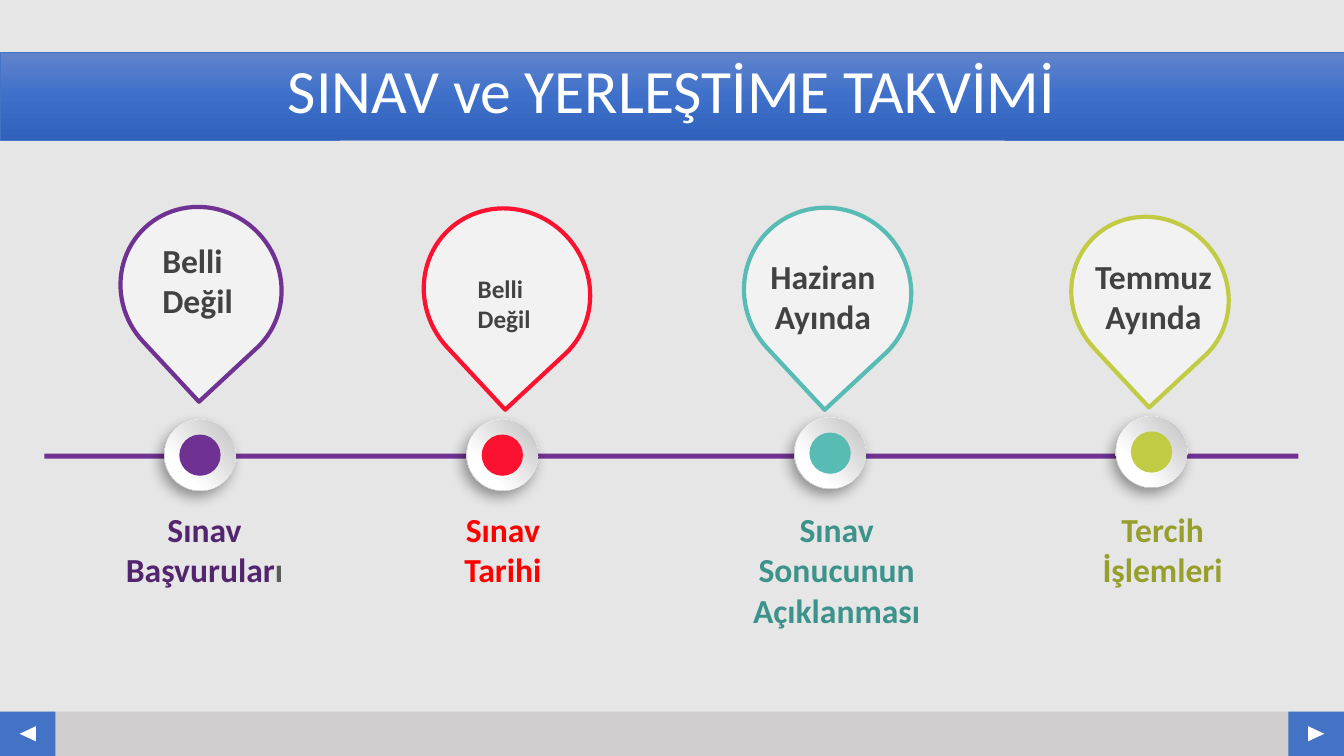
from copy import deepcopy
from dataclasses import dataclass
from typing import NamedTuple

from lxml.etree import SubElement
from pptx import Presentation
from pptx.dml.color import RGBColor
from pptx.enum.shapes import MSO_SHAPE
from pptx.enum.text import MSO_ANCHOR, MSO_AUTO_SIZE, PP_ALIGN
from pptx.oxml.ns import qn
from pptx.shapes.autoshape import Shape
from pptx.slide import Slide
from pptx.util import Cm, Pt


class Box(NamedTuple):
    left: float
    top: float
    width: float
    height: float


class Stop(NamedTuple):
    position: float
    color: str


@dataclass(frozen=True)
class Theme:
    font: str = "Calibri"
    background: str = "E7E6E6"
    footer: str = "D0CECE"
    accent: str = "4472C4"
    white: str = "FFFFFF"
    pin_fill: str = "F2F2F2"
    date_text: str = "424242"
    label_tail: str = "595959"
    timeline: str = "6F3293"
    banner: tuple[Stop, ...] = (Stop(0, "6183CB"), Stop(0.5, "3E70CA"), Stop(1, "3062BB"))
    knob_rim: tuple[Stop, ...] = (Stop(0.17, "FFFFFF"), Stop(0.88, "B8B8B8"))
    knob_face: tuple[Stop, ...] = (Stop(0.29, "FFFFFF"), Stop(0.98, "BFBFBF"))
    title_size: int = 44
    text_size: int = 24
    small_size: int = 18


@dataclass(frozen=True)
class Step:
    color: str
    pin: Box
    date: str
    date_box: Box
    knob_x: float
    knob_y: float
    label: str
    label_box: Box
    label_color: str
    label_tail: str = ""
    date_size: int = 24
    date_align: PP_ALIGN = PP_ALIGN.CENTER
    date_wraps: bool = False


THEME = Theme()
WIDTH, HEIGHT = 33.87, 19.05
FOOTER_HEIGHT, BUTTON_WIDTH = 1.12, 1.4
ARROW_WIDTH, ARROW_HEIGHT = 0.38, 0.41
PIN_ANGLE = 137.1

STEPS = (
    Step("6F3293", Box(3.07, 5.18, 3.99, 4.14), "Belli\nDeğil", Box(3.84, 5.92, 2.31, 2.31),
         5.04, 11.47, "Sınav Başvurular", Box(2.74, 12.7, 4.83, 2.31), "53256E",
         label_tail="ı", date_align=PP_ALIGN.LEFT),
    Step("FA1230", Box(10.72, 5.21, 4.11, 4.29), "Belli\nDeğil", Box(11.79, 6.76, 2.39, 1.8),
         12.66, 11.47, "Sınav Tarihi", Box(10.54, 12.7, 4.27, 2.31), "FF0000",
         date_size=THEME.small_size, date_align=PP_ALIGN.LEFT, date_wraps=True),
    Step("58BBB4", Box(18.77, 5.21, 4.17, 4.27), "Haziran\nAyında", Box(18.95, 6.32, 3.58, 2.31),
         20.92, 11.42, "Sınav Sonucunun Açıklanması", Box(18.34, 12.7, 5.49, 3.33), "3C938C"),
    Step("C2CB44", Box(27.05, 5.41, 3.86, 4.09), "Temmuz\nAyında", Box(27.33, 6.32, 3.48, 2.31),
         29.02, 11.39, "Tercih İşlemleri", Box(27.33, 12.7, 3.94, 2.31), "979F2C"),
)


def rgb(color: str) -> RGBColor:
    return RGBColor.from_string(color)


def add_block(slide: Slide, kind: MSO_SHAPE, box: Box, color: str, rotation: float = 0) -> Shape:
    block = slide.shapes.add_shape(kind, *map(Cm, box))
    block.shadow.inherit = False
    block.fill.solid()
    block.fill.fore_color.rgb = rgb(color)
    block.line.fill.background()
    block.rotation = rotation
    return block


def set_outline(block: Shape, color: str, points: float) -> None:
    block.line.color.rgb = rgb(color)
    block.line.width = Pt(points)


def set_gradient(block: Shape, stops: tuple[Stop, ...], angle: float) -> None:
    block.fill.gradient()
    block.fill.gradient_angle = angle
    stop_list = next(block._element.spPr.iter(qn("a:gsLst")))
    for _ in stops[2:]:
        stop_list.append(deepcopy(stop_list[-1]))
    for gradient_stop, stop in zip(block.fill.gradient_stops, stops):
        gradient_stop.position = stop.position
        gradient_stop.color.rgb = rgb(stop.color)


def add_soft_shadow(block: Shape) -> None:
    effects = block._element.spPr.find(qn("a:effectLst"))
    shadow = SubElement(effects, qn("a:outerShdw"), blurRad=str(Pt(10)), dist=str(Pt(5)),
                        dir=str(123 * 60000), algn="ctr", rotWithShape="0")
    black = SubElement(shadow, qn("a:srgbClr"), val="000000")
    SubElement(black, qn("a:alpha"), val="39000")


def format_text(holder: Shape, color: str, size: int, align: PP_ALIGN, bold: bool) -> None:
    for paragraph in holder.text_frame.paragraphs:
        paragraph.alignment = align
        for run in paragraph.runs:
            run.font.name = THEME.font
            run.font.size = Pt(size)
            run.font.bold = bold
            run.font.color.rgb = rgb(color)


def add_caption(slide: Slide, text: str, box: Box, color: str, size: int = THEME.text_size,
                align: PP_ALIGN = PP_ALIGN.CENTER, wraps: bool = True, tail: str = "") -> None:
    caption = slide.shapes.add_textbox(*map(Cm, box))
    frame = caption.text_frame
    frame.text = text
    frame.word_wrap = wraps
    frame.auto_size = MSO_AUTO_SIZE.SHAPE_TO_FIT_TEXT
    if tail:
        frame.paragraphs[-1].add_run().text = tail
    format_text(caption, color, size, align, True)
    if tail:
        frame.paragraphs[-1].runs[-1].font.color.rgb = rgb(THEME.label_tail)


def add_footer(slide: Slide) -> None:
    top = HEIGHT - FOOTER_HEIGHT
    add_block(slide, MSO_SHAPE.RECTANGLE, Box(0, top, WIDTH, FOOTER_HEIGHT), THEME.footer)
    for left, rotation in ((0, 270), (WIDTH - BUTTON_WIDTH, 90)):
        add_block(slide, MSO_SHAPE.RECTANGLE, Box(left, top, BUTTON_WIDTH, FOOTER_HEIGHT),
                  THEME.accent)
        arrow = Box(left + (BUTTON_WIDTH - ARROW_WIDTH) / 2,
                    top + (FOOTER_HEIGHT - ARROW_HEIGHT) / 2, ARROW_WIDTH, ARROW_HEIGHT)
        add_block(slide, MSO_SHAPE.ISOSCELES_TRIANGLE, arrow, THEME.white, rotation)


def add_banner(slide: Slide) -> None:
    banner = add_block(slide, MSO_SHAPE.RECTANGLE, Box(0, 1.32, WIDTH, 2.21), THEME.accent)
    set_gradient(banner, THEME.banner, 270)
    set_outline(banner, THEME.accent, 0.5)
    frame = banner.text_frame
    frame.text = "SINAV ve YERLEŞTİME TAKVİMİ"
    frame.word_wrap = True
    frame.vertical_anchor = MSO_ANCHOR.MIDDLE
    frame.margin_bottom = Cm(0.25)
    frame.paragraphs[0].line_spacing = 0.9
    format_text(banner, THEME.white, THEME.title_size, PP_ALIGN.CENTER, False)


def add_disc(slide: Slide, step: Step, diameter: float, rotation: float = 0) -> Shape:
    box = Box(step.knob_x - diameter / 2, step.knob_y - diameter / 2, diameter, diameter)
    return add_block(slide, MSO_SHAPE.OVAL, box, step.color, rotation)


def add_knob(slide: Slide, step: Step) -> None:
    rim = add_disc(slide, step, 1.8, 62.3)
    set_gradient(rim, THEME.knob_rim, 315)
    add_soft_shadow(rim)
    set_gradient(add_disc(slide, step, 1.78, 273), THEME.knob_face, 315)
    add_disc(slide, step, 1.04)


def add_step(slide: Slide, step: Step) -> None:
    add_knob(slide, step)
    pin = add_block(slide, MSO_SHAPE.TEAR, step.pin, THEME.pin_fill, PIN_ANGLE)
    set_outline(pin, step.color, 3)
    add_caption(slide, step.date, step.date_box, THEME.date_text, step.date_size,
                step.date_align, step.date_wraps)
    add_caption(slide, step.label, step.label_box, step.label_color, tail=step.label_tail)


def main() -> None:
    presentation = Presentation()
    presentation.slide_width, presentation.slide_height = Cm(WIDTH), Cm(HEIGHT)
    slide = presentation.slides.add_slide(presentation.slide_layouts[6])
    slide.background.fill.solid()
    slide.background.fill.fore_color.rgb = rgb(THEME.background)
    add_footer(slide)
    add_banner(slide)
    add_block(slide, MSO_SHAPE.RECTANGLE, Box(1.12, 11.43, 31.6, 0.13), THEME.timeline)
    for step in STEPS:
        add_step(slide, step)
    presentation.save("out.pptx")


if __name__ == "__main__":
    main()
